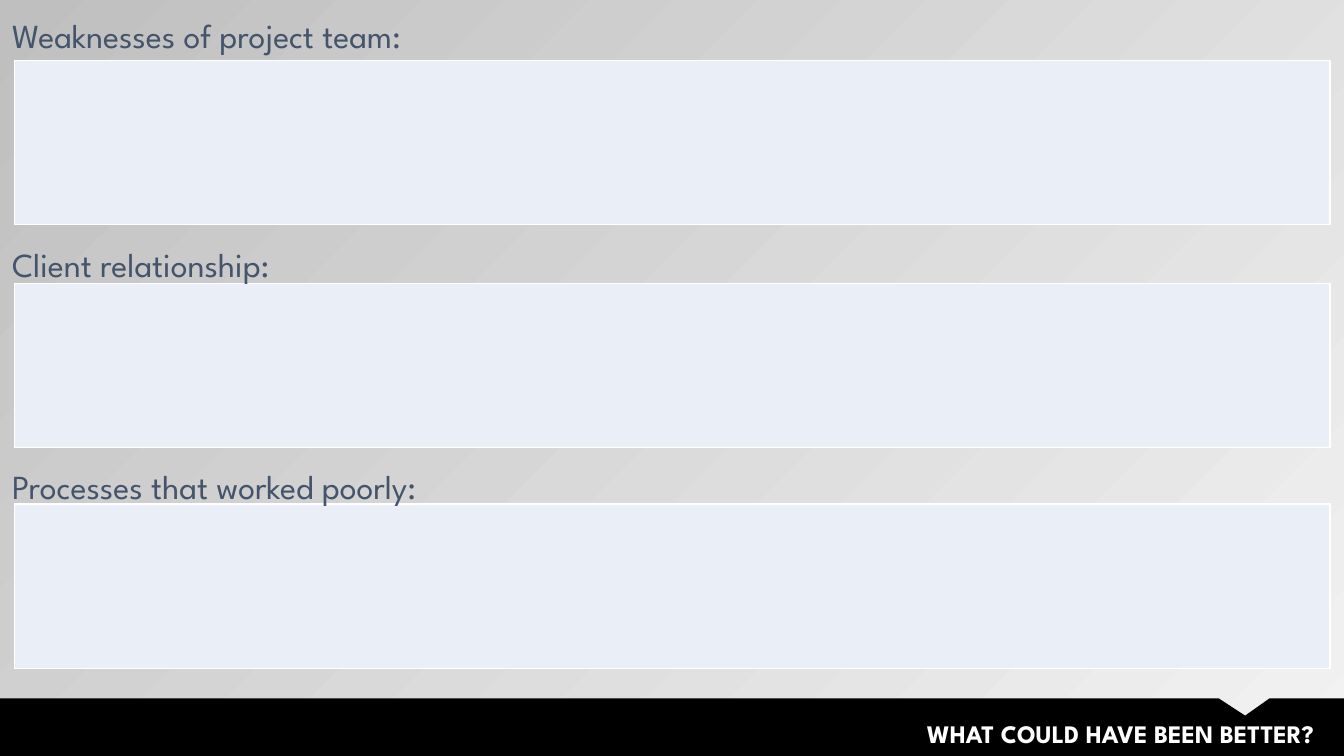
from dataclasses import dataclass
from typing import Optional

from lxml.etree import SubElement
from pptx import Presentation
from pptx.dml.color import RGBColor
from pptx.enum.text import MSO_ANCHOR as Anchor, MSO_AUTO_SIZE as AutoSize, PP_ALIGN as Align
from pptx.oxml.ns import qn
from pptx.slide import Slide
from pptx.util import Inches, Length, Pt


@dataclass(frozen=True)
class Theme:
    font: str = "League Spartan"
    heading_size: Length = Pt(24)
    heading_gap: Length = Pt(4.8)
    title_size: Length = Pt(18)
    border_width: Length = Pt(1)
    footer: RGBColor = RGBColor.from_string("000000")
    title: RGBColor = RGBColor.from_string("FFFFFF")
    heading: RGBColor = RGBColor.from_string("44546A")
    answer: RGBColor = RGBColor.from_string("EAEFF7")
    border: str = "FFFFFF"
    backdrop_light: RGBColor = RGBColor.from_string("F2F2F2")
    backdrop_dark: RGBColor = RGBColor.from_string("BFBFBF")


@dataclass(frozen=True)
class Section:
    heading: str
    heading_top: float
    heading_height: float
    line_spacing: float | Length
    answer_top: float


THEME = Theme()
WIDTH, HEIGHT = 13.33, 7.5
FOOTER_TOP = 6.93
SECTIONS = [
    Section("Weaknesses of project team:", 0.19, 0.44, Pt(21.5), 0.6),
    Section("Client relationship:", 2.28, 0.57, 1.2, 2.81),
    Section("Processes that worked poorly:", 4.48, 0.57, 1.2, 5),
]


def write(frame, text: str, size: Length, color: RGBColor, bold: Optional[bool] = None):
    """Add one styled run and return its paragraph."""
    paragraph = frame.paragraphs[0]
    run = paragraph.add_run()
    run.text = text
    run.font.name = THEME.font
    run.font.size = size
    run.font.bold = bold
    run.font.color.rgb = color
    return paragraph


def paint_backdrop(slide: Slide) -> None:
    fill = slide.background.fill
    fill.gradient()
    fill.gradient_angle = 135
    light, dark = fill.gradient_stops
    light.position, dark.position = 0, 1
    light.color.rgb = THEME.backdrop_light
    dark.color.rgb = THEME.backdrop_dark


def add_footer(slide: Slide) -> None:
    # Black band with a notch above the title
    outline = [(12.09, FOOTER_TOP), (12.35, 7.1), (12.59, FOOTER_TOP),
               (WIDTH, FOOTER_TOP), (WIDTH, HEIGHT), (0, HEIGHT)]
    builder = slide.shapes.build_freeform(0, Inches(FOOTER_TOP))
    builder.add_line_segments([(Inches(x), Inches(y)) for x, y in outline])
    band = builder.convert_to_shape()
    band.shadow.inherit = False
    band.fill.solid()
    band.fill.fore_color.rgb = THEME.footer
    band.line.fill.background()

    # Title in front of the band
    title = slide.shapes.title
    title.element.addprevious(band.element)
    title.left, title.top = Inches(4.14), Inches(7.08)
    title.width, title.height = Inches(9.06), Inches(0.4)
    frame = title.text_frame
    frame.vertical_anchor = Anchor.TOP
    frame.auto_size = AutoSize.SHAPE_TO_FIT_TEXT
    paragraph = write(frame, "WHAT COULD HAVE BEEN BETTER? ",
                      THEME.title_size, THEME.title, bold=True)
    paragraph.alignment = Align.RIGHT


def add_answer(slide: Slide, top: float) -> None:
    table = slide.shapes.add_table(1, 1, Inches(0.14), Inches(top),
                                   Inches(13.05), Inches(1.63)).table
    table.first_row = table.horz_banding = False
    cell = table.cell(0, 0)
    properties = cell._tc.get_or_add_tcPr()
    for side in ("lnL", "lnR", "lnT", "lnB"):
        border = SubElement(properties, qn(f"a:{side}"), w=str(int(THEME.border_width)))
        fill = SubElement(border, qn("a:solidFill"))
        SubElement(fill, qn("a:srgbClr"), val=THEME.border)
    cell.fill.solid()
    cell.fill.fore_color.rgb = THEME.answer


def add_heading(slide: Slide, section: Section) -> None:
    heading = slide.shapes.add_textbox(0, Inches(section.heading_top),
                                       Inches(7.63), Inches(section.heading_height))
    frame = heading.text_frame
    frame.word_wrap = True
    frame.auto_size = AutoSize.SHAPE_TO_FIT_TEXT
    frame.margin_left = frame.margin_right = Inches(0.12)
    frame.margin_top = frame.margin_bottom = Inches(0.06)
    paragraph = write(frame, section.heading, THEME.heading_size, THEME.heading)
    paragraph.line_spacing = section.line_spacing
    paragraph.space_before = THEME.heading_gap


def main() -> None:
    deck = Presentation()
    deck.slide_width, deck.slide_height = Inches(WIDTH), Inches(HEIGHT)
    slide = deck.slides.add_slide(deck.slide_layouts[5])
    paint_backdrop(slide)
    add_footer(slide)
    for section in SECTIONS:
        add_answer(slide, section.answer_top)
        add_heading(slide, section)
    deck.save("out.pptx")


if __name__ == "__main__":
    main()
